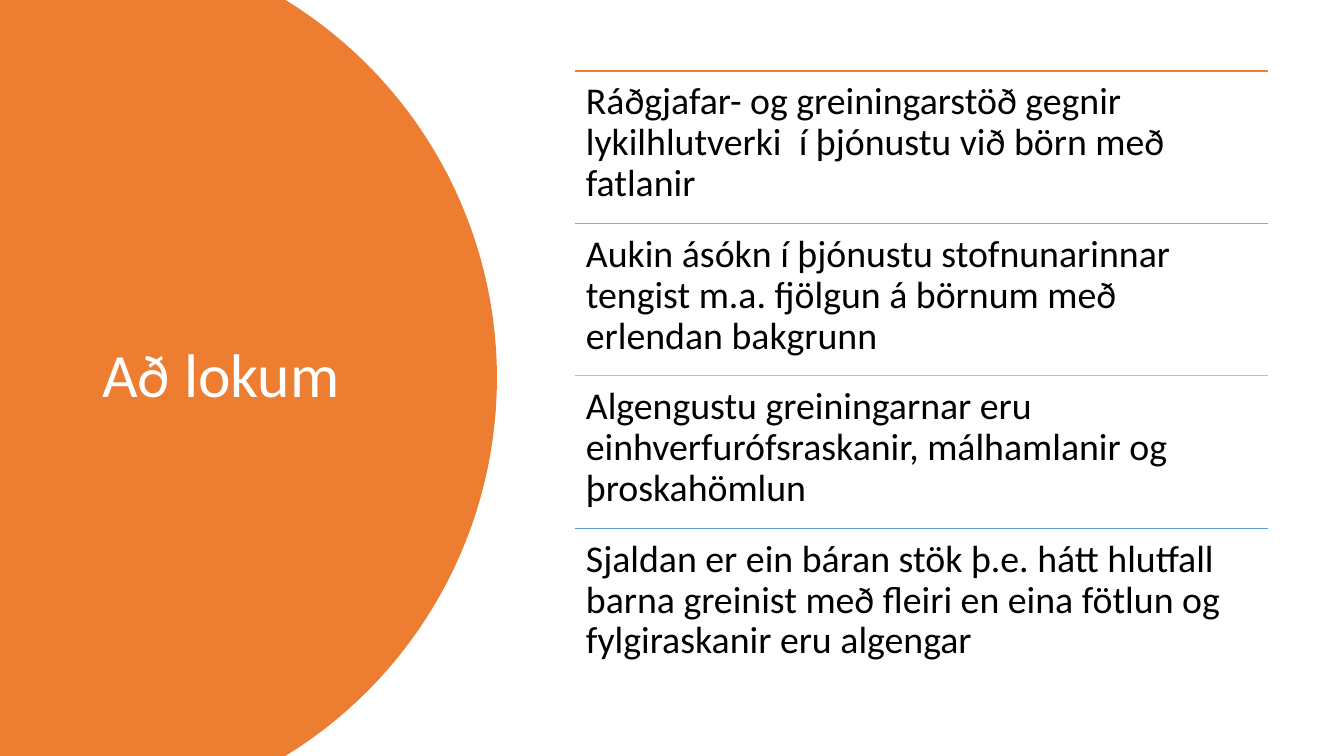
import math

import lxml.etree
import pptx
import pptx.dml.color
import pptx.enum.shapes
import pptx.enum.text
import pptx.oxml.ns
import pptx.util

Pt = pptx.util.Pt
RGB = pptx.dml.color.RGBColor
ANCHOR = pptx.enum.text.MSO_ANCHOR

WHITE = RGB(0xFF, 0xFF, 0xFF)
BLACK = RGB(0x00, 0x00, 0x00)
ORANGE = RGB(0xED, 0x7D, 0x31)
GRAY = RGB(0xA5, 0xA5, 0xA5)
GOLD = RGB(0xFF, 0xC0, 0x00)
BLUE = RGB(0x5B, 0x9B, 0xD5)

WIDE, HIGH = 960, 540
LEFT, TOP, SPAN, STEP = 410.4, 50.6, 495.4, 108.9

POINTS = [
    (ORANGE, "Ráðgjafar- og greiningarstöð gegnir lykilhlutverki  í þjónustu við börn með fatlanir"),
    (GRAY, "Aukin ásókn í þjónustu stofnunarinnar tengist m.a. fjölgun á börnum með erlendan bakgrunn"),
    (GOLD, "Algengustu greiningarnar eru einhverfurófsraskanir, málhamlanir og þroskahömlun"),
    (BLUE, "Sjaldan er ein báran stök þ.e. hátt hlutfall barna greinist með fleiri en eina fötlun "
           "og fylgiraskanir eru algengar"),
]


class Slide:
    font = "Calibri"
    spacing = 0.9

    def __init__(self, deck):
        self.shapes = deck.slides.add_slide(deck.slide_layouts[6]).shapes

    def dome(self, mid, radius, color, steps=60):
        """Fill the slide from its left edge to an arc centred at x = mid."""
        half = math.asin(HIGH / 2 / radius)
        turns = [half * (2 * i / steps - 1) for i in range(steps + 1)]
        arc = [(Pt(mid + radius * math.cos(t)), Pt(HIGH / 2 + radius * math.sin(t)))
               for t in turns]
        pen = self.shapes.build_freeform(0, 0, scale=1.0)
        pen.add_line_segments(arc + [(0, Pt(HIGH))], close=True)
        shape = pen.convert_to_shape()
        shape.shadow.inherit = False
        shape.fill.solid()
        shape.fill.fore_color.rgb = color
        shape.line.fill.background()

    def rule(self, x, y, width, color):
        line = self.shapes.add_connector(
            pptx.enum.shapes.MSO_CONNECTOR.STRAIGHT, Pt(x), Pt(y), Pt(x + width), Pt(y))
        line.line.color.rgb = color
        line.line.width = Pt(1)
        lxml.etree.SubElement(line._element.spPr, pptx.oxml.ns.qn("a:effectLst"))

    def text(self, box, words, size, color, anchor, pad):
        frame = self.shapes.add_textbox(*map(Pt, box)).text_frame
        frame.word_wrap = True
        frame.vertical_anchor = anchor
        frame.margin_left = frame.margin_right = Pt(pad[0])
        frame.margin_top = frame.margin_bottom = Pt(pad[1])
        frame.text = words
        para = frame.paragraphs[0]
        para.line_spacing = self.spacing
        font = para.runs[0].font
        font.name = self.font
        font.size = Pt(size)
        font.color.rgb = color


def main():
    deck = pptx.Presentation()
    deck.slide_width, deck.slide_height = Pt(WIDE), Pt(HIGH)
    slide = Slide(deck)
    slide.dome(38.2, 316.8, ORANGE)
    slide.text((66, 50.6, 232.6, 438.4), "Að lokum", 44, WHITE, ANCHOR.MIDDLE, (7.2, 3.6))
    for row, (color, words) in enumerate(POINTS):
        y = TOP + row * STEP
        slide.rule(LEFT, y, SPAN, color)
        slide.text((LEFT, y, SPAN, STEP), words, 27, BLACK, ANCHOR.TOP, (8.1, 8.1))
    deck.save("out.pptx")


if __name__ == "__main__":
    main()
